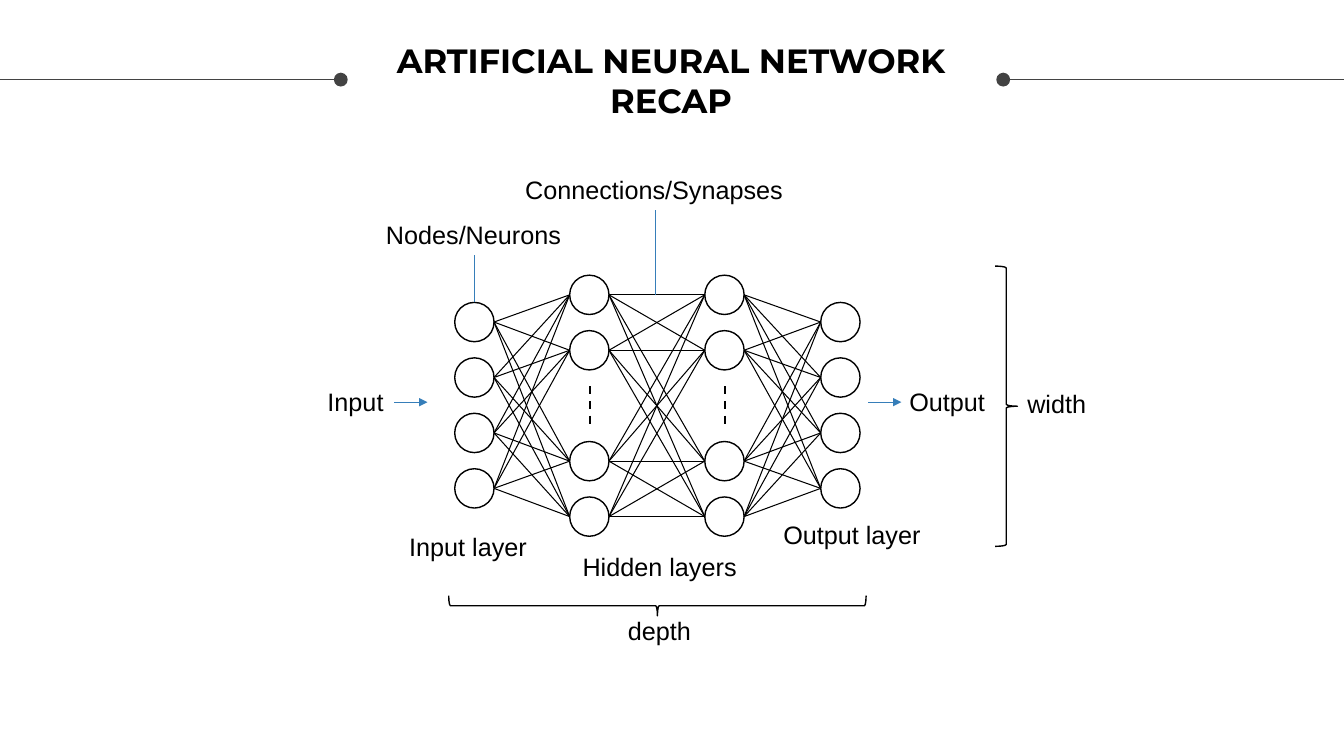
from itertools import pairwise, product

from lxml.etree import SubElement
from pptx import Presentation
from pptx.dml.color import RGBColor
from pptx.enum.dml import MSO_LINE
from pptx.enum.shapes import MSO_CONNECTOR, MSO_SHAPE
from pptx.enum.text import MSO_ANCHOR, MSO_AUTO_SIZE, PP_ALIGN
from pptx.oxml.ns import qn
from pptx.util import Inches, Pt

BLACK, GREY, BLUE = "000000", "434343", "367EB9"
NODE = 0.39
ROW_STEP = 0.55
OUTER_LAYER = (3.0, (0, 1, 2, 3))
HIDDEN_LAYER = (2.73, (0, 1, 3, 4))
LAYERS = [(4.51, OUTER_LAYER), (5.65, HIDDEN_LAYER),
          (6.99, HIDDEN_LAYER), (8.14, OUTER_LAYER)]
LABELS = [
    ("width", 10.09, 3.8, 0.79),
    ("depth", 6.13, 6.06, 0.83),
    ("Nodes/Neurons", 3.73, 2.13, 1.96),
    ("Connections/Synapses", 5.11, 1.68, 2.78),
    ("Input layer", 3.96, 5.22, 1.38),
    ("Output layer", 7.67, 5.1, 1.58),
    ("Hidden layers", 5.68, 5.42, 1.74),
    ("Input", 3.15, 3.78, 0.76),
    ("Output", 8.92, 3.78, 0.96),
]


def color(hex_code):
    """Turn a hex string into a colour."""
    return RGBColor.from_string(hex_code)


def write(para, text, font="Arial", size=18, bold=False, hex_code=BLACK):
    """Add a formatted span of text to a paragraph."""
    span = para.add_run()
    span.text = text
    span.font.name = font
    span.font.size = Pt(size)
    span.font.bold = bold
    span.font.color.rgb = color(hex_code)


def add_title(page, text):
    """Place and fill the title placeholder."""
    title = page.shapes.title
    title.left, title.top = Inches(3.77), Inches(0.17)
    title.width, title.height = Inches(5.77), Inches(1.25)
    frame = title.text_frame
    frame.word_wrap = True
    frame.auto_size = MSO_AUTO_SIZE.NONE
    frame.vertical_anchor = MSO_ANCHOR.MIDDLE
    frame.margin_left = frame.margin_right = Inches(0.1)
    frame.margin_top = frame.margin_bottom = Inches(0.1)
    para = frame.paragraphs[0]
    para.alignment = PP_ALIGN.CENTER
    write(para, text, font="Montserrat", size=24, bold=True)


def add_label(page, text, left, top, width):
    """Add a one-line label."""
    box = page.shapes.add_textbox(Inches(left), Inches(top), Inches(width), Inches(0.4))
    box.text_frame.word_wrap = False
    box.text_frame.auto_size = MSO_AUTO_SIZE.SHAPE_TO_FIT_TEXT
    write(box.text_frame.paragraphs[0], text)


def add_line(shapes, start, end, hex_code=BLACK, weight=0.75, dash=None):
    """Draw a straight line between two points."""
    line = shapes.add_connector(MSO_CONNECTOR.STRAIGHT, *map(Inches, start + end))
    line.line.color.rgb = color(hex_code)
    line.line.width = Pt(weight)
    if dash:
        line.line.dash_style = dash
    SubElement(line._element.spPr, qn("a:effectLst"))
    return line


def add_line_end(line, tag, kind, size):
    """Put a head or tail mark on a line."""
    outline = line.line._get_or_add_ln()
    SubElement(outline, qn(tag), type=kind, w=size, len=size)


def add_outline(shapes, kind, left, top, width, height):
    """Add an unfilled shape with a thin black line."""
    shape = shapes.add_shape(kind, Inches(left), Inches(top), Inches(width), Inches(height))
    shape.shadow.inherit = False
    shape.fill.background()
    shape.line.color.rgb = color(BLACK)
    shape.line.width = Pt(1)
    return shape


def row_tops(layer):
    """List the top of every node in a layer."""
    first, rows = layer
    return [first + row * ROW_STEP for row in rows]


def add_network(page):
    """Draw the nodes of all layers and the links between neighbours."""
    shapes = page.shapes.add_group_shape().shapes
    for left, layer in LAYERS:
        for top in row_tops(layer):
            add_outline(shapes, MSO_SHAPE.OVAL, left, top, NODE, NODE)
        if layer is HIDDEN_LAYER:
            middle = left + 0.2
            add_line(shapes, (middle, 3.83), (middle, 4.24), weight=1.5, dash=MSO_LINE.DASH)
    for (left, layer), (next_left, next_layer) in pairwise(LAYERS):
        for top, next_top in product(row_tops(layer), row_tops(next_layer)):
            add_line(shapes, (left + NODE, top + NODE / 2), (next_left, next_top + NODE / 2))


def main():
    """Build the slide and save it."""
    deck = Presentation()
    deck.slide_width, deck.slide_height = Inches(13.33), Inches(7.5)
    page = deck.slides.add_slide(deck.slide_layouts[5])

    for dot, edge in ((3.38, 0), (9.95, 13.33)):
        rule = add_line(page.shapes, (dot, 0.79), (edge, 0.79), GREY)
        add_line_end(rule, "a:headEnd", "oval", "lg")
    add_title(page, "ARTIFICIAL NEURAL NETWORK RECAP")

    add_network(page)
    depth_brace = add_outline(page.shapes, MSO_SHAPE.RIGHT_BRACE, 6.42, 3.94, 0.2, 4.14)
    depth_brace.rotation = 90
    add_outline(page.shapes, MSO_SHAPE.RIGHT_BRACE, 9.87, 2.64, 0.22, 2.78)

    for label in LABELS:
        add_label(page, *label)
    for x, bottom, top in ((6.5, 2.93, 2.08), (4.71, 3.0, 2.53)):
        add_line(page.shapes, (x, bottom), (x, top), BLUE)
    for x in (3.91, 8.61):
        arrow = add_line(page.shapes, (x, 3.99), (x + 0.33, 3.99), BLUE)
        add_line_end(arrow, "a:tailEnd", "triangle", "med")

    deck.save("out.pptx")


if __name__ == "__main__":
    main()
